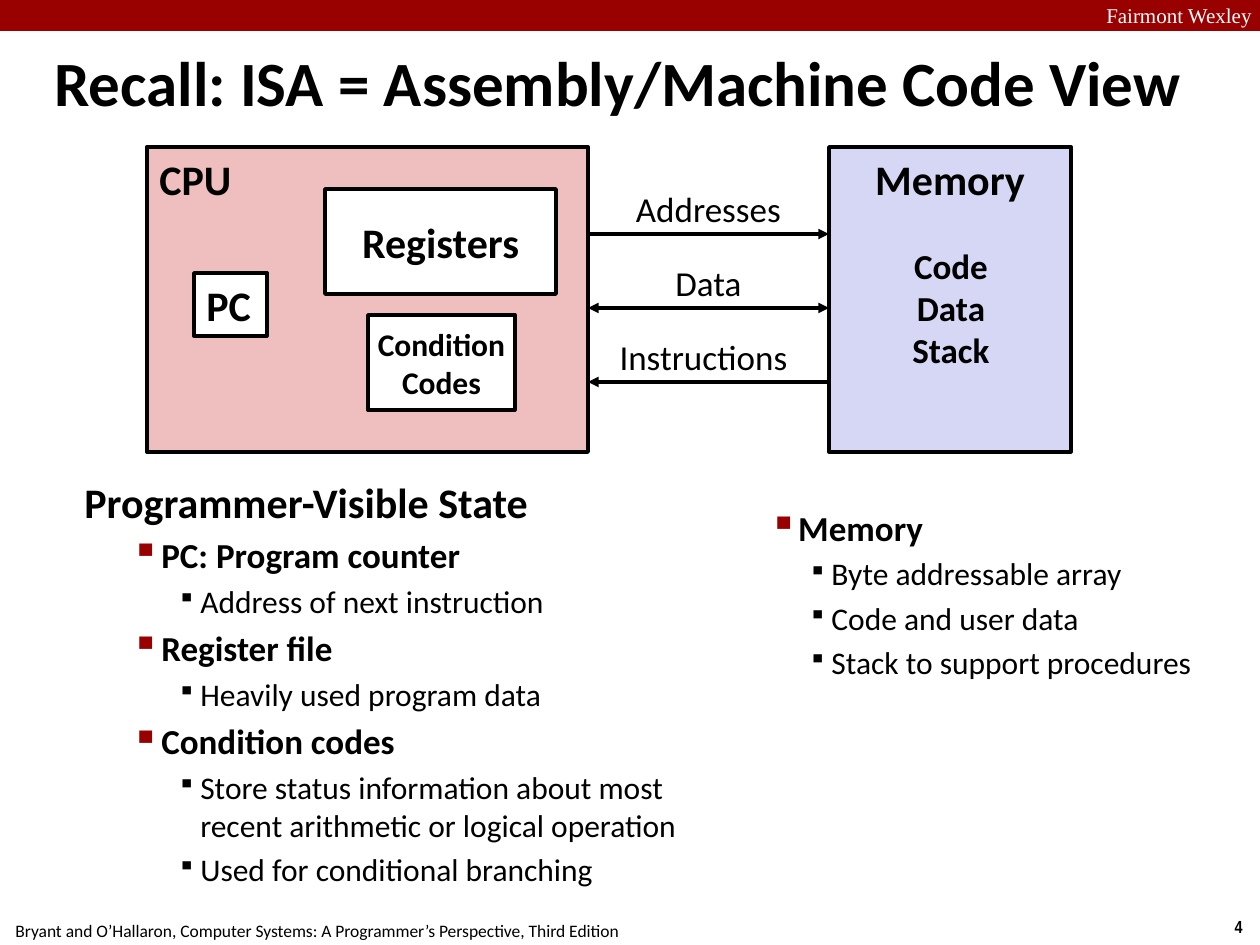
from dataclasses import dataclass

from lxml import etree
from pptx import Presentation
from pptx.dml.color import RGBColor
from pptx.enum.shapes import MSO_CONNECTOR, MSO_SHAPE
from pptx.enum.text import MSO_ANCHOR, PP_ALIGN
from pptx.oxml.ns import qn
from pptx.util import Emu, Pt

LEFT, CENTER = PP_ALIGN.LEFT, PP_ALIGN.CENTER
TOP, MIDDLE = MSO_ANCHOR.TOP, MSO_ANCHOR.MIDDLE
RECTANGLE, STRAIGHT = MSO_SHAPE.RECTANGLE, MSO_CONNECTOR.STRAIGHT
EMU_PER_PX = 914400 / 126


@dataclass(frozen=True)
class Theme:
    body_font: str = "Calibri"
    banner_font: str = "Times New Roman"
    number_font: str = "Arial Narrow"
    black: str = "000000"
    white: str = "FFFFFF"
    red: str = "990000"
    cpu: str = "EFBFBF"
    memory: str = "D6D6F5"
    title: int = 36
    heading: int = 24
    topic: int = 20
    detail: int = 18
    banner: int = 12
    footer: int = 10
    line: float = 2


THEME = Theme()


@dataclass(frozen=True)
class Box:
    left: int
    top: int
    width: int
    height: int

    def inner(self, left, top, width, height):
        return Box(self.left + left, self.top + top, width, height)

    def emu(self):
        return [px(n) for n in (self.left, self.top, self.width, self.height)]


def px(count):
    return Emu(round(count * EMU_PER_PX))


def color(value):
    return RGBColor.from_string(value)


def style(para, size, bold=False, font=THEME.body_font, ink=THEME.black):
    para.font.name = font
    para.font.size = Pt(size)
    para.font.bold = bold
    para.font.color.rgb = color(ink)


def write(shape, lines, size, align=CENTER, anchor=TOP, wrap=True, **look):
    frame = shape.text_frame
    frame.word_wrap = wrap
    frame.vertical_anchor = anchor
    frame.text = "\n".join(lines)
    for para in frame.paragraphs:
        para.alignment = align
        style(para, size, **look)


def add_text(page, box, lines, size, **look):
    write(page.shapes.add_textbox(*box.emu()), lines, size, **look)


def add_block(page, box, fill, line_width=None):
    shape = page.shapes.add_shape(RECTANGLE, *box.emu())
    shape.shadow.inherit = False
    shape.fill.solid()
    shape.fill.fore_color.rgb = color(fill)
    if line_width:
        shape.line.color.rgb = color(THEME.black)
        shape.line.width = Pt(line_width)
    else:
        shape.line.fill.background()
    return shape


def add_arrow(page, left, right, y, ends):
    arrow = page.shapes.add_connector(STRAIGHT, px(left), px(y), px(right), px(y))
    arrow.line.color.rgb = color(THEME.black)
    arrow.line.width = Pt(THEME.line)
    stroke = arrow.line._get_or_add_ln()
    for end in ends:
        etree.SubElement(stroke, qn(f"a:{end}"), type="triangle")
    etree.SubElement(arrow._element.spPr, qn("a:effectLst"))


def add_bullet(para, margin, hanging, percent, ink):
    props = para._p.get_or_add_pPr()
    props.set("marL", str(px(margin)))
    props.set("indent", str(-px(hanging)))
    tint = etree.SubElement(props, qn("a:buClr"))
    etree.SubElement(tint, qn("a:srgbClr"), val=ink)
    etree.SubElement(props, qn("a:buSzPct"), val=str(percent * 1000))
    etree.SubElement(props, qn("a:buChar"), char="▪")


def draw_outline(page, box, entries, topic_bullet, detail_bullet):
    """Entries are (level, text); each bullet is (margin, hanging) in px."""
    frame = page.shapes.add_textbox(*box.emu()).text_frame
    frame.word_wrap = True
    levels = [
        (THEME.heading, True, None),
        (THEME.topic, True, (*topic_bullet, 110, THEME.red)),
        (THEME.detail, False, (*detail_bullet, 80, THEME.black)),
    ]
    for index, (level, text) in enumerate(entries):
        para = frame.add_paragraph() if index else frame.paragraphs[0]
        size, bold, bullet = levels[level]
        para.text = text
        para.level = level
        para.space_before = Pt(size * 0.2)
        style(para, size, bold)
        if bullet:
            add_bullet(para, *bullet)


def draw_banner(page, box):
    add_block(page, box, THEME.red)
    add_text(page, box.inner(1089, -4, 180, 38), ["Fairmont Wexley"],
             THEME.banner, font=THEME.banner_font, ink=THEME.white)


def draw_footer(page, box):
    source = "Bryant and O’Hallaron, Computer Systems: A Programmer’s Perspective, Third Edition"
    add_text(page, box.inner(-3, 4, 640, 34), [source], THEME.footer, wrap=False)
    add_text(page, box.inner(1217, 0, 43, 34), ["4"], THEME.footer,
             wrap=False, bold=True, font=THEME.number_font)


def draw_machine(page, box):
    # CPU and its parts
    cpu = add_block(page, box.inner(0, 0, 441, 305), THEME.cpu, 2.25)
    write(cpu, ["CPU"], THEME.heading, align=LEFT, bold=True)
    parts = [
        ((47, 126, 73, 63), ["PC"], THEME.heading, LEFT),
        ((178, 42, 231, 105), ["Registers"], THEME.heading, CENTER),
        ((221, 168, 147, 95), ["Condition", "Codes"], THEME.detail, CENTER),
    ]
    for place, lines, size, align in parts:
        part = add_block(page, box.inner(*place), THEME.white, THEME.line)
        write(part, lines, size, align=align, anchor=MIDDLE, wrap=False, bold=True)

    # Memory and its contents
    memory = add_block(page, box.inner(682, 0, 242, 305), THEME.memory, THEME.line)
    write(memory, ["Memory"], THEME.heading, wrap=False, bold=True)
    add_text(page, box.inner(725, 91, 158, 140), ["Code", "Data", "Stack"],
             THEME.topic, bold=True)

    # Traffic between CPU and memory
    flows = [
        ("Addresses", 241, ["tailEnd"]),
        ("Data", 241, ["headEnd", "tailEnd"]),
        ("Instructions", 231, ["headEnd"]),
    ]
    for row, (label, width, ends) in enumerate(flows):
        y = 87 + 74 * row
        add_arrow(page, box.left + 441, box.left + 682, box.top + y, ends)
        add_text(page, box.inner(441, y - 53, width, 54), [label], THEME.topic)


def main():
    deck = Presentation()
    deck.slide_width, deck.slide_height = px(1260), px(945)
    page = deck.slides.add_slide(deck.slide_layouts[6])

    draw_banner(page, Box(0, 0, 1260, 31))
    draw_footer(page, Box(0, 910, 1260, 35))
    add_text(page, Box(42, 42, 1163, 79), ["Recall: ISA = Assembly/Machine Code View"],
             THEME.title, align=LEFT, anchor=MIDDLE, bold=True)
    draw_machine(page, Box(147, 147, 925, 305))
    draw_outline(page, Box(72, 470, 669, 438), [
        (0, "Programmer-Visible State"),
        (1, "PC: Program counter"),
        (2, "Address of next instruction"),
        (1, "Register file"),
        (2, "Heavily used program data"),
        (1, "Condition codes"),
        (2, "Store status information about most recent arithmetic or logical operation"),
        (2, "Used for conditional branching"),
    ], (77, 30), (116, 23))
    draw_outline(page, Box(741, 500, 499, 217), [
        (1, "Memory"),
        (2, "Byte addressable array"),
        (2, "Code and user data"),
        (2, "Stack to support procedures"),
    ], (40, 24), (78, 23))
    deck.save("out.pptx")


if __name__ == "__main__":
    main()
